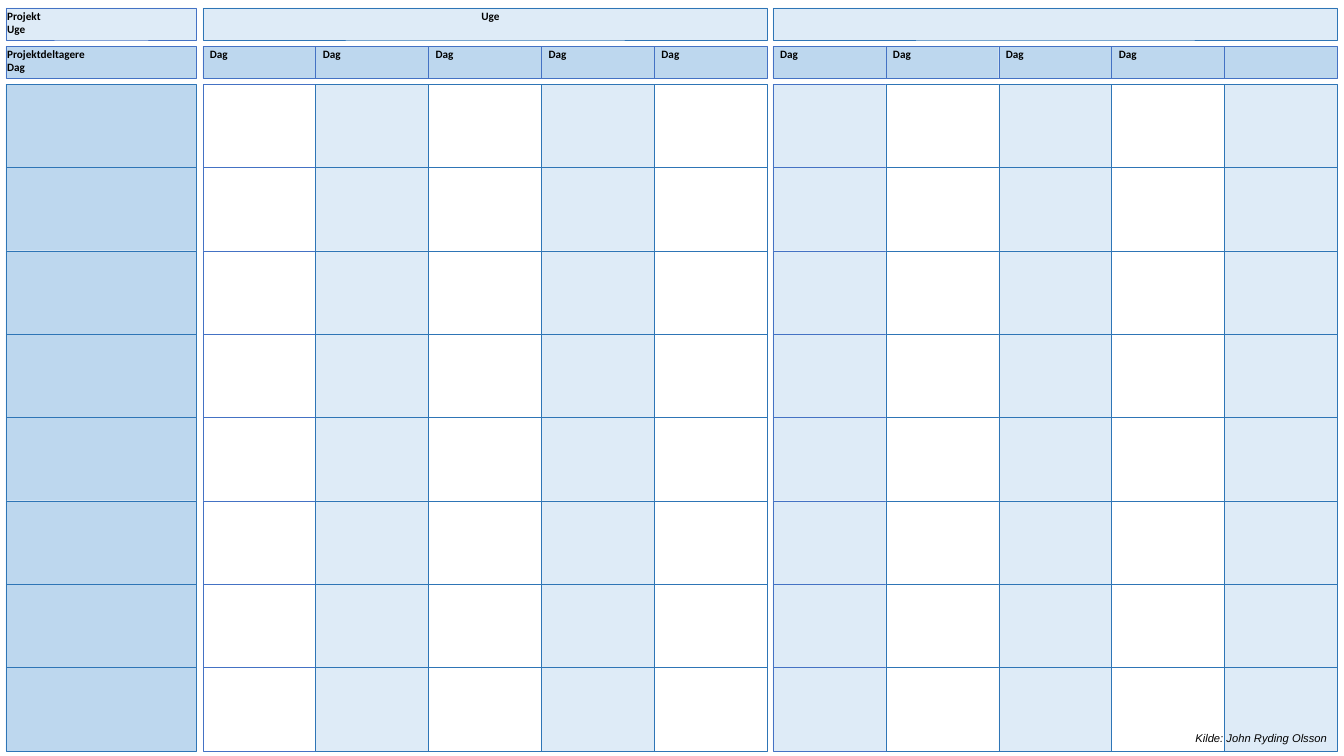
from dataclasses import dataclass

from lxml.etree import SubElement
from pptx import Presentation
from pptx.dml.color import RGBColor
from pptx.enum.shapes import MSO_SHAPE as Shape
from pptx.enum.text import PP_ALIGN as Align
from pptx.oxml.ns import qn
from pptx.util import Cm, Pt


@dataclass(frozen=True)
class Theme:
    white: str = "FFFFFF"
    pale: str = "DEEBF7"
    medium: str = "BDD7EE"
    ink: str = "000000"
    line: str = "2E75B6"
    accent_line: str = "4472C4"
    line_width: float = 0.25
    label_font: str = "Calibri"
    source_font: str = "Arial"
    text_size: int = 8


THEME = Theme()

# Layout in centimetres
WEEK_TOP, DAY_TOP, GRID_TOP = 0.2, 1.17, 2.12
HEADER_HEIGHT = 0.81
ROWS, ROW_HEIGHT = 8, 2.1
NAMES_LEFT, NAMES_WIDTH = 0.15, 4.8
WEEK_LEFTS = (5.11, 19.48)
DAYS, DAY_WIDTH = 5, 2.845
LABEL_LEFT, LABEL_WIDTH = 0.18, 33.5
WEEK_LABEL_LEFT = 12.13
DAY_LABELS = 9


def add_cell(slide, left, top, width, height, fill, line=THEME.line):
    cell = slide.shapes.add_shape(Shape.RECTANGLE, Cm(left), Cm(top), Cm(width), Cm(height))
    cell.shadow.inherit = False
    cell.fill.solid()
    cell.fill.fore_color.rgb = RGBColor.from_string(fill)
    cell.line.color.rgb = RGBColor.from_string(line)
    cell.line.width = Pt(THEME.line_width)


def add_column(slide, left, width, fill, line=THEME.line):
    """Day header with the participant rows below it."""
    add_cell(slide, left, DAY_TOP, width, HEADER_HEIGHT, THEME.medium, THEME.accent_line)
    for row in range(ROWS):
        add_cell(slide, left, GRID_TOP + row * ROW_HEIGHT, width, ROW_HEIGHT, fill, line)


def add_names(slide, left, width):
    add_column(slide, left, width, THEME.medium)
    add_cell(slide, left, WEEK_TOP, width, HEADER_HEIGHT, THEME.pale, THEME.accent_line)


def add_week(slide, left, fills):
    """Five day columns with alternating fills under one week bar."""
    for day in range(DAYS):
        line = THEME.line if day else THEME.accent_line
        add_column(slide, left + day * DAY_WIDTH, DAY_WIDTH, fills[day % 2], line)
    add_cell(slide, left, WEEK_TOP, DAYS * DAY_WIDTH, HEADER_HEIGHT, THEME.pale)


def add_text(slide, left, top, width, height, text, font_name):
    box = slide.shapes.add_textbox(Cm(left), Cm(top), Cm(width), Cm(height))
    frame = box.text_frame
    frame.word_wrap = True
    frame.margin_left = frame.margin_right = 0
    paragraph = frame.paragraphs[0]
    paragraph.text = text
    font = paragraph.font
    font.name, font.size = font_name, Pt(THEME.text_size)
    font.color.rgb = RGBColor.from_string(THEME.ink)
    return paragraph


def add_header_labels(slide, top, first, repeated, positions):
    """Heading, labels at tab stops, and the label again on the next line."""
    text = first + f"\t{repeated}" * len(positions) + f"\v{repeated}"
    paragraph = add_text(slide, LABEL_LEFT, top, LABEL_WIDTH, 0.9, text, THEME.label_font)
    paragraph.font.bold = True
    properties = paragraph._p.get_or_add_pPr()
    tabs = SubElement(properties, qn("a:tabLst"))
    properties.insert(0, tabs)
    for position in positions:
        SubElement(tabs, qn("a:tab"), pos=str(Cm(position - LABEL_LEFT)), algn="l")


def add_source(slide, left, top, width, height):
    paragraph = add_text(slide, left, top, width, height,
                         "Kilde: John Ryding Olsson", THEME.source_font)
    paragraph.font.italic = True
    paragraph.alignment = Align.RIGHT


def main():
    presentation = Presentation()
    presentation.slide_width, presentation.slide_height = Cm(33.87), Cm(19.05)
    slide = presentation.slides.add_slide(presentation.slide_layouts[6])

    # Participants and the two weeks
    add_names(slide, NAMES_LEFT, NAMES_WIDTH)
    add_week(slide, WEEK_LEFTS[0], (THEME.white, THEME.pale))
    add_week(slide, WEEK_LEFTS[1], (THEME.pale, THEME.white))

    # Header labels, each day label just inside its column
    day_lefts = [left + day * DAY_WIDTH + 0.18 for left in WEEK_LEFTS for day in range(DAYS)]
    add_header_labels(slide, 0.1, "Projekt", "Uge", [WEEK_LABEL_LEFT])
    add_header_labels(slide, 1.07, "Projektdeltagere", "Dag", day_lefts[:DAY_LABELS])

    add_source(slide, 29.4, 18.31, 4.05, 0.61)
    presentation.save("out.pptx")


if __name__ == "__main__":
    main()
